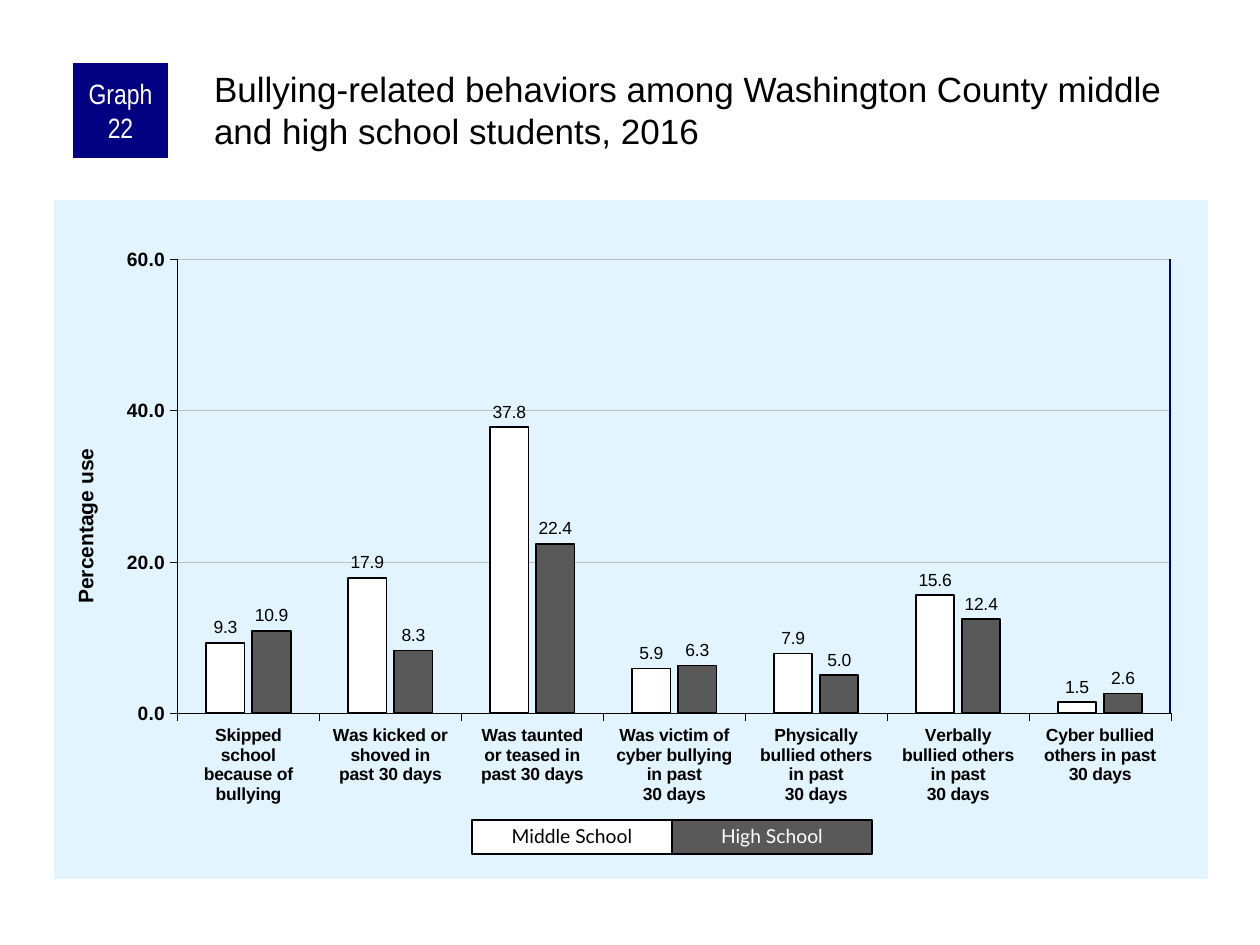
from lxml import etree
from pptx import Presentation
from pptx.chart.data import CategoryChartData
from pptx.dml.color import RGBColor
from pptx.enum.chart import XL_CHART_TYPE, XL_LABEL_POSITION, XL_TICK_MARK
from pptx.enum.shapes import MSO_CONNECTOR, MSO_SHAPE
from pptx.enum.text import MSO_ANCHOR, MSO_AUTO_SIZE, PP_ALIGN
from pptx.oxml import parse_xml
from pptx.oxml.ns import nsdecls, qn
from pptx.util import Emu, Pt

COLUMNS = XL_CHART_TYPE.COLUMN_CLUSTERED
OUTSIDE_END = XL_LABEL_POSITION.OUTSIDE_END
TICK_OUT, TICK_NONE = XL_TICK_MARK.OUTSIDE, XL_TICK_MARK.NONE
RECTANGLE, STRAIGHT = MSO_SHAPE.RECTANGLE, MSO_CONNECTOR.STRAIGHT
TOP, MIDDLE = MSO_ANCHOR.TOP, MSO_ANCHOR.MIDDLE
LEFT, CENTER = PP_ALIGN.LEFT, PP_ALIGN.CENTER
NO_AUTOFIT = MSO_AUTO_SIZE.NONE

PX_PER_INCH = 126
COLORS = {"black": "000000", "white": "FFFFFF", "navy": "000080",
          "gray": "595959", "grid": "C0C0C0", "panel": "E1F4FF"}
PLOT_AREA = {"x": 0.107, "y": 0.087, "w": 0.861, "h": 0.669}

BEHAVIORS = [
    "Skipped\nschool\nbecause of\nbullying",
    "Was kicked or\nshoved in\npast 30 days",
    "Was taunted\nor teased in\npast 30 days",
    "Was victim of\ncyber bullying\nin past\n30 days",
    "Physically\nbullied others\nin past\n30 days",
    "Verbally\nbullied others\nin past\n30 days",
    "Cyber bullied\nothers in past\n30 days",
]
# School level, bar colour, legend text colour, percentages
SCHOOLS = [
    ("Middle School", "white", "black", [9.3, 17.9, 37.8, 5.9, 7.9, 15.6, 1.5]),
    ("High School", "gray", "white", [10.9, 8.3, 22.4, 6.3, 5.0, 12.4, 2.6]),
]


def px(length):
    return Emu(round(length * 914400 / PX_PER_INCH))


def rgb(color):
    return RGBColor.from_string(COLORS[color])


def style_font(font, size, color="black", name="Arial", bold=False):
    font.size, font.name, font.bold = Pt(size), name, bold
    font.color.rgb = rgb(color)


def style_line(line, color, width):
    line.color.rgb = rgb(color)
    line.width = Pt(width)


def write_text(frame, text, align, anchor, margins, **font):
    """Fill a frame with one paragraph; margins are left, top, right, bottom."""
    frame.text = text
    frame.word_wrap = True
    frame.auto_size = NO_AUTOFIT
    frame.vertical_anchor = anchor
    (frame.margin_left, frame.margin_top,
     frame.margin_right, frame.margin_bottom) = map(px, margins)
    paragraph = frame.paragraphs[0]
    paragraph.alignment = align
    style_font(paragraph.runs[0].font, **font)
    return paragraph


def add_title(slide, text):
    title = slide.shapes.title
    title.left, title.top, title.width, title.height = map(px, (210, 63, 998, 105))
    paragraph = write_text(title.text_frame, text, LEFT, TOP, (4, 4, 0, 0), size=20)
    paragraph.line_spacing = 1.0


def add_box(slide, bounds, text, fill, margins, **font):
    box = slide.shapes.add_shape(RECTANGLE, *map(px, bounds))
    box.shadow.inherit = False
    box.fill.solid()
    box.fill.fore_color.rgb = rgb(fill)
    box.line.fill.background()
    paragraph = write_text(box.text_frame, text, CENTER, MIDDLE, margins, **font)
    return box, paragraph


def add_legend(slide):
    width = 200
    for index, (school, fill, text_color, _) in enumerate(SCHOOLS):
        box, label = add_box(slide, (472 + index * width, 820, width, 34), school,
                             fill, (12, 6, 12, 6), size=11, color=text_color, name="Lato")
        style_line(box.line, "black", 0.75)
        label.line_spacing = 0.9


def add_plot_edge(slide):
    edge = slide.shapes.add_connector(STRAIGHT, *map(px, (1170, 259, 1170, 713)))
    style_line(edge.line, "navy", 1.5)
    etree.SubElement(edge._element.spPr, qn("a:effectLst"))


def format_axis(axis, size):
    axis.major_tick_mark, axis.minor_tick_mark = TICK_OUT, TICK_NONE
    style_line(axis.format.line, "black", 0.25)
    style_font(axis.tick_labels.font, size, bold=True)


def format_value_axis(axis):
    format_axis(axis, 11)
    axis.minimum_scale, axis.maximum_scale, axis.major_unit = 0, 60, 20
    style_line(axis.major_gridlines.format.line, "grid", 0.25)
    axis.tick_labels.number_format = "0.0"
    axis.tick_labels.number_format_is_linked = False
    caption = axis.axis_title.text_frame
    caption.text = "Percentage use"
    style_font(caption.paragraphs[0].runs[0].font, 12, bold=True)


def format_series(series, color):
    series.format.fill.solid()
    series.format.fill.fore_color.rgb = rgb(color)
    style_line(series.format.line, "black", 1)
    series.invert_if_negative = False
    labels = series.data_labels
    labels.show_value = True
    labels.number_format, labels.number_format_is_linked = "0.0", False
    labels.position = OUTSIDE_END
    style_font(labels.font, 10)


def set_panel_and_plot(chart):
    """Fill the chart background and fix the inner plot area."""
    space = chart._chartSpace
    space.find(qn("c:chart")).addnext(parse_xml(
        f'<c:spPr {nsdecls("c", "a")}><a:solidFill><a:srgbClr val="{COLORS["panel"]}"/>'
        '</a:solidFill><a:ln><a:noFill/></a:ln></c:spPr>'))
    plot_area = space.find(".//" + qn("c:plotArea"))
    for layout in plot_area.findall(qn("c:layout")):
        plot_area.remove(layout)
    settings = {"layoutTarget": "inner", "xMode": "edge", "yMode": "edge", **PLOT_AREA}
    parts = "".join(f'<c:{tag} val="{value}"/>' for tag, value in settings.items())
    plot_area.insert(0, parse_xml(
        f'<c:layout {nsdecls("c")}><c:manualLayout>{parts}</c:manualLayout></c:layout>'))


def add_behavior_chart(slide):
    data = CategoryChartData(number_format="0.0")
    data.categories = BEHAVIORS
    for school, _, _, percentages in SCHOOLS:
        data.add_series(school, percentages)
    bounds = map(px, (54, 200, 1154, 679))
    chart = slide.shapes.add_chart(COLUMNS, *bounds, data).chart
    chart.has_title = chart.has_legend = False
    style_font(chart.font, 11.5)
    plot = chart.plots[0]
    plot.gap_width, plot.overlap, plot.vary_by_categories = 150, -20, False
    format_axis(chart.category_axis, 10)
    format_value_axis(chart.value_axis)
    for series, (_, color, _, _) in zip(plot.series, SCHOOLS):
        format_series(series, color)
    set_panel_and_plot(chart)


def main():
    deck = Presentation()
    deck.slide_width, deck.slide_height = px(1260), px(945)
    slide = deck.slides.add_slide(deck.slide_layouts.get_by_name("Title Only"))
    add_behavior_chart(slide)
    add_plot_edge(slide)
    add_box(slide, (73, 63, 95, 95), "Graph 22", "navy", (6, 0, 6, 0),
            size=16, color="white", name="Arial Narrow")
    add_title(slide, "Bullying-related behaviors among Washington County middle "
                     "and high school students, 2016")
    add_legend(slide)
    deck.save("out.pptx")


if __name__ == "__main__":
    main()
